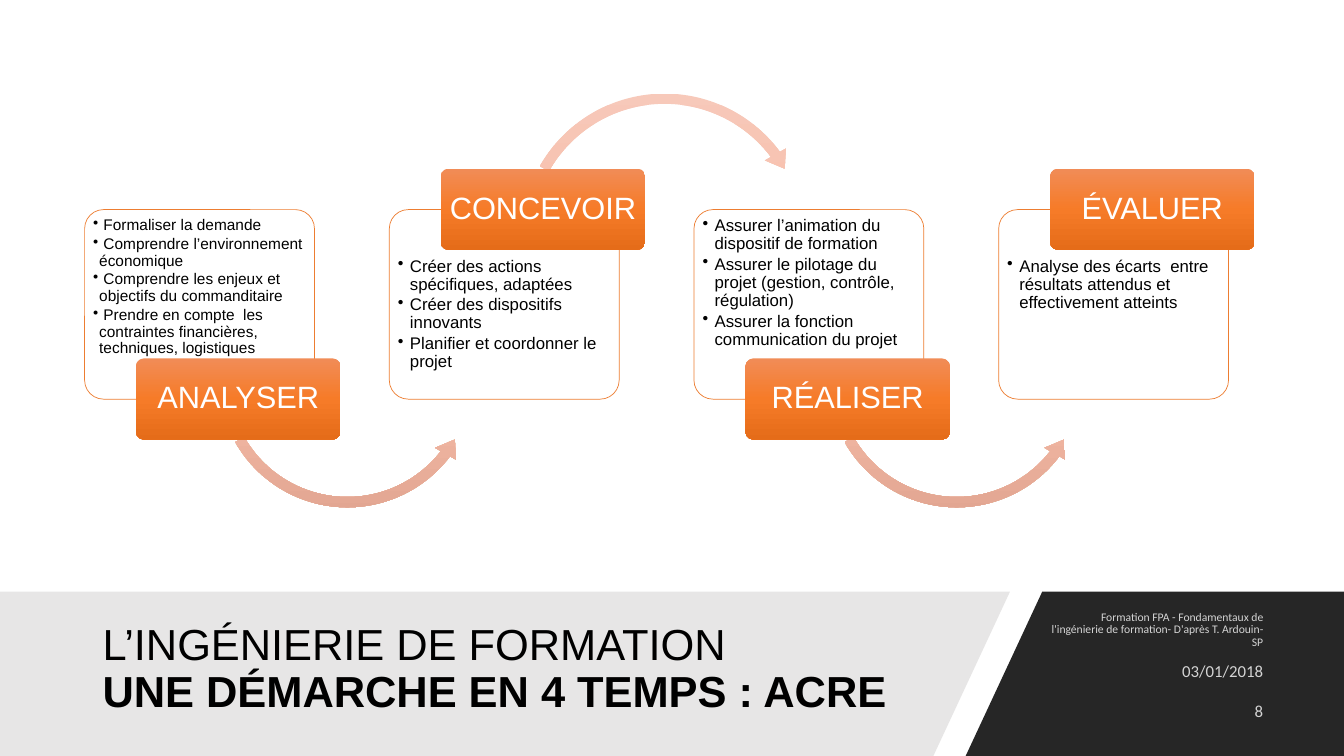
import copy
import pptx
import pptx.dml.color
import pptx.enum.shapes
import pptx.enum.text
import pptx.oxml
import pptx.oxml.ns
import pptx.util

deck = pptx.Presentation()
deck.slide_width = pptx.util.Inches(13.33)
deck.slide_height = pptx.util.Inches(7.5)
page = deck.slides.add_slide(deck.slide_layouts[6])

Inches, Pt = pptx.util.Inches, pptx.util.Pt
Kind = pptx.enum.shapes.MSO_SHAPE
Anchor = pptx.enum.text.MSO_ANCHOR
Align = pptx.enum.text.PP_ALIGN
qn = pptx.oxml.ns.qn


def hue(code):
    return pptx.dml.color.RGBColor.from_string(code)


def share(*percents):
    sides = (deck.slide_width, deck.slide_height)
    return [round(sides[i % 2] * percent / 100) for i, percent in enumerate(percents)]


band_top = 78.27
bands = [
    ("262626", [(77.55, band_top), (100, band_top), (100, 100), (71.85, 100)]),
    ("E7E6E6", [(0, band_top), (75.15, band_top), (69.45, 100), (0, 100)]),
]
for color, corners in bands:
    points = [share(*corner) for corner in corners]
    builder = page.shapes.build_freeform(*points[0], scale=1.0)
    builder.add_line_segments(points[1:], close=True)
    band = builder.convert_to_shape()
    band.shadow.inherit = False
    band.fill.solid()
    band.fill.fore_color.rgb = hue(color)
    band.line.fill.background()

label_colors = ["F18C57", "F67B28", "E56C19"]
arrow_colors = ["F7C9BA", "F8BEAA", "E2A692"]
low_arrow = (Kind.LEFT_CIRCULAR_ARROW, 9.45, 32.13, 20.18, 35.87,
             [0.038, 4.725, 22.48, 90.245, 0.044])
high_arrow = (Kind.CIRCULAR_ARROW, 9.3, 11.47, 22.35, 39.73,
              [0.034, 4.225, 194.02, 125.755, 0.04])

steps = [
    ("ANALYSER", low_arrow, 11, 0.06, [
        " Formaliser la demande",
        " Comprendre l’environnement économique",
        " Comprendre les enjeux et objectifs du commanditaire",
        " Prendre en compte  les contraintes financières, techniques, logistiques"]),
    ("CONCEVOIR", high_arrow, 12, 0.12, [
        "Créer des actions spécifiques, adaptées",
        "Créer des dispositifs innovants",
        "Planifier et coordonner le projet"]),
    ("RÉALISER", low_arrow, 12, 0.12, [
        "Assurer l’animation du dispositif de formation",
        "Assurer le pilotage du projet (gestion, contrôle, régulation)",
        "Assurer la fonction communication du projet"]),
    ("ÉVALUER", None, 12, 0.12, [
        "Analyse des écarts  entre résultats attendus et effectivement atteints"]),
]

texts = []
gradients = []
for column, (name, arrow, size, indent, items) in enumerate(steps):
    left = 6.3 + 22.67 * column
    label_on_top = column % 2 == 1

    panel = page.shapes.add_shape(Kind.ROUNDED_RECTANGLE, *share(left, 27.73, 17.1, 25.07))
    panel.shadow.inherit = False
    panel.adjustments[0] = 0.1
    panel.fill.solid()
    panel.fill.fore_color.rgb = hue("FFFFFF")
    panel.line.color.rgb = hue("ED7D31")
    panel.line.width = Pt(0.5)
    frame_style = {"vertical_anchor": Anchor.TOP,
                   "margin_left": Inches(0.03), "margin_right": Inches(0.02),
                   "margin_top": Inches(0.42 if label_on_top else 0.02), "margin_bottom": 0}
    para_style = {"alignment": Align.LEFT, "line_spacing": 0.9, "space_after": Pt(size * 0.15)}
    font_style = {"name": "Arial", "size": Pt(size)}
    texts.append((panel, items, frame_style, para_style, font_style, "000000", indent))

    if arrow:
        kind, offset, top, width, height, bends = arrow
        curve = page.shapes.add_shape(kind, *share(left + offset, top, width, height))
        for index, bend in enumerate(bends):
            curve.adjustments[index] = bend
        gradients.append((curve, arrow_colors))

    label_top = 22.3 if label_on_top else 47.4
    label = page.shapes.add_shape(
        Kind.ROUNDED_RECTANGLE, *share(left + 3.82, label_top, 15.22, 10.75))
    label.adjustments[0] = 0.1
    gradients.append((label, label_colors))
    frame_style = {"vertical_anchor": Anchor.MIDDLE,
                   "margin_left": Inches(0.02), "margin_right": Inches(0.02)}
    para_style = {"alignment": Align.CENTER, "line_spacing": 0.9}
    font_style = {"name": "Arial", "size": Pt(22)}
    texts.append((label, [name], frame_style, para_style, font_style, "FFFFFF", None))

for shape, colors in gradients:
    shape.shadow.inherit = False
    shape.line.fill.background()
    shape.fill.gradient()
    shape.fill.gradient_angle = 270
    stop_list = shape.element.spPr.find(qn("a:gradFill")).find(qn("a:gsLst"))
    stop_list.append(copy.deepcopy(stop_list[0]))
    for stop, position, color in zip(shape.fill.gradient_stops, (0, 0.5, 1), colors):
        stop.position = position
        stop.color.rgb = hue(color)

title = page.shapes.add_textbox(*share(6.9, 80.67, 63.3, 16))
texts.append((title, ["L’INGÉNIERIE DE FORMATION", "UNE DÉMARCHE EN 4 TEMPS : ACRE"],
              {"vertical_anchor": Anchor.MIDDLE}, {"line_spacing": 0.9},
              {"name": "Arial", "size": Pt(31)}, "000000", None))

footers = [
    ("Formation FPA - Fondamentaux de l'ingénierie de formation- D'après T. Ardouin-SP", 8.3, 0.9),
    ("03/01/2018", 12, 1.0),
    ("8", 12, 1.0),
]
for row, (content, size, spacing) in enumerate(footers):
    footer = page.shapes.add_textbox(*share(77.25, 80.67 + 5.33 * row, 17.48, 5.33))
    texts.append((footer, [content], {"vertical_anchor": Anchor.MIDDLE},
                  {"alignment": Align.RIGHT, "line_spacing": spacing, "space_after": Pt(6)},
                  {"name": "Calibri", "size": Pt(size)}, "D4D4D4", None))

for box, lines, frame_style, para_style, font_style, color, indent in texts:
    frame = box.text_frame
    frame.word_wrap = True
    for key, value in frame_style.items():
        setattr(frame, key, value)
    for index, line in enumerate(lines):
        para = frame.add_paragraph() if index else frame.paragraphs[0]
        for key, value in para_style.items():
            setattr(para, key, value)
        span = para.add_run()
        span.text = line
        for key, value in font_style.items():
            setattr(span.font, key, value)
        span.font.color.rgb = hue(color)
        if indent:
            settings = para._p.get_or_add_pPr()
            settings.set("marL", str(Inches(indent)))
            settings.set("indent", str(-Inches(indent)))
            bullet = pptx.oxml.parse_xml(
                '<a:buChar xmlns:a="http://schemas.openxmlformats.org/drawingml/2006/main" char="•"/>')
            settings.append(bullet)

title.text_frame.paragraphs[1].runs[0].font.bold = True

deck.save("out.pptx")
